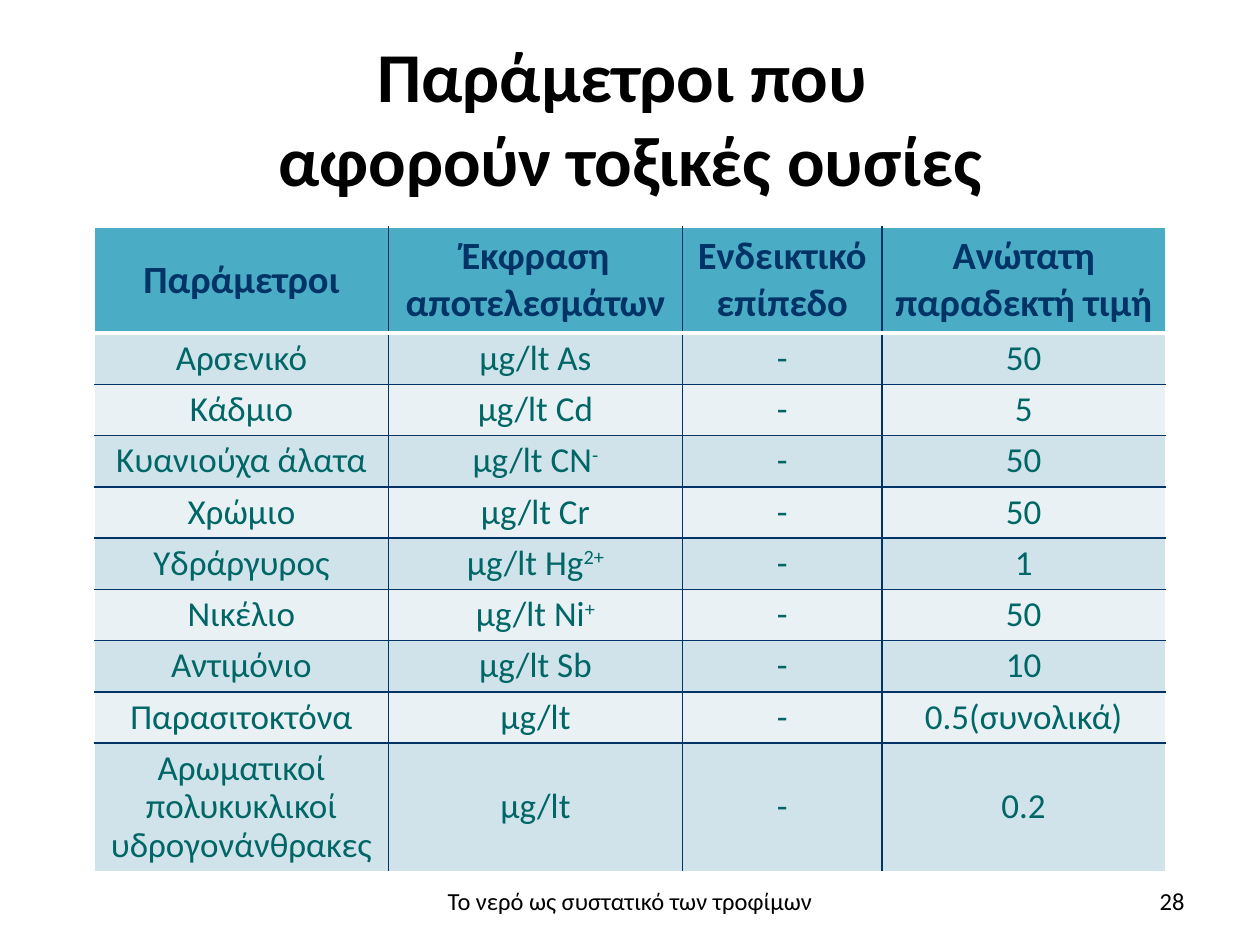
from dataclasses import dataclass

from lxml.etree import SubElement
from pptx import Presentation
from pptx.dml.color import RGBColor
from pptx.enum.text import MSO_ANCHOR, PP_ALIGN
from pptx.oxml.ns import qn
from pptx.util import Inches, Pt

FONT = "Calibri"
COLORS = {
    "black": "000000",
    "white": "FFFFFF",
    "navy": "003366",
    "teal": "006666",
    "header": "4BACC6",
    "odd": "D0E3EA",
    "even": "E9F1F5",
}
UNITS_PER_INCH = 12
COLUMN_SPANS = (28, 28, 19, 27)
HEADER_SPAN, ROW_SPAN, LAST_SPAN = 8.8, 4.2, 10.5


@dataclass(frozen=True)
class Area:
    column: float
    row: float
    columns: float
    rows: float

    def lengths(self) -> list:
        return [units(n) for n in (self.column, self.row, self.columns, self.rows)]


@dataclass(frozen=True)
class Label:
    lines: tuple
    area: Area
    size: int
    align: PP_ALIGN = PP_ALIGN.CENTER
    bold: bool = False


@dataclass(frozen=True)
class Substance:
    name: str
    unit: str
    limit: str
    charge: str = ""


@dataclass(frozen=True)
class CellStyle:
    fill: str
    color: str
    size: int
    bold: bool = False
    spacing: float = 1.0


LABELS = (
    Label(("Παράμετροι που ", "αφορούν τοξικές ουσίες"), Area(6, 3.6, 108, 15), 40, bold=True),
    Label(("Το νερό ως συστατικό των τροφίμων",), Area(41, 83.4, 38, 4.8), 14),
    Label(("28",), Area(86, 83.4, 28, 4.8), 14, PP_ALIGN.RIGHT),
)
HEADINGS = ("Παράμετροι", "Έκφραση αποτελεσμάτων", "Ενδεικτικό επίπεδο", "Ανώτατη παραδεκτή τιμή")
SUBSTANCES = (
    Substance("Αρσενικό", "μg/lt Αs", "50"),
    Substance("Κάδμιο", "μg/lt Cd", "5"),
    Substance("Κυανιούχα άλατα", "μg/lt CN", "50", "-"),
    Substance("Χρώμιο", "μg/lt Cr", "50"),
    Substance("Υδράργυρος", "μg/lt Hg", "1", "2+"),
    Substance("Νικέλιο", "μg/lt Ni", "50", "+"),
    Substance("Αντιμόνιο", "μg/lt Sb", "10"),
    Substance("Παρασιτοκτόνα", "μg/lt", "0.5(συνολικά)"),
    Substance("Αρωματικοί πολυκυκλικοί υδρογονάνθρακες ", "μg/lt", "0.2"),
)


def units(count: float) -> int:
    return Inches(count / UNITS_PER_INCH)


def style_paragraph(para, size: int, color: str, bold: bool, align: PP_ALIGN) -> None:
    para.alignment = align
    para.font.name = FONT
    para.font.size = Pt(size)
    para.font.bold = bold
    para.font.color.rgb = RGBColor.from_string(COLORS[color])


def draw_label(page, label: Label) -> None:
    frame = page.shapes.add_textbox(*label.area.lengths()).text_frame
    frame.word_wrap = True
    frame.vertical_anchor = MSO_ANCHOR.MIDDLE
    para = frame.paragraphs[0]
    for index, line in enumerate(label.lines):
        if index:
            para.add_line_break()
        para.add_run().text = line
    style_paragraph(para, label.size, "black", label.bold, label.align)


def draw_border(cell, side: str, color: str, width: float) -> None:
    line = SubElement(cell._tc.get_or_add_tcPr(), qn(f"a:ln{side}"), w=str(Pt(width)))
    fill = SubElement(line, qn("a:solidFill"))
    SubElement(fill, qn("a:srgbClr"), val=COLORS[color])


def draw_borders(cell, row: int, column: int) -> None:
    last_row, last_column = len(SUBSTANCES), len(HEADINGS) - 1
    draw_border(cell, "L", "white" if column == 0 else "navy", 1)
    draw_border(cell, "R", "white" if column == last_column else "navy", 1)
    draw_border(cell, "T", "white" if row <= 1 else "navy", 3 if row == 1 else 1)
    draw_border(cell, "B", "white" if row in (0, last_row) else "navy", 3 if row == 0 else 1)


def fill_cell(cell, text: str, raised: str, style: CellStyle) -> None:
    cell.fill.solid()
    cell.fill.fore_color.rgb = RGBColor.from_string(COLORS[style.fill])
    cell.vertical_anchor = MSO_ANCHOR.MIDDLE
    para = cell.text_frame.paragraphs[0]
    para.line_spacing = style.spacing
    para.add_run().text = text
    if raised:
        span = para.add_run()
        span.text = raised
        span._r.get_or_add_rPr().set("baseline", "30000")
    style_paragraph(para, style.size, style.color, style.bold, PP_ALIGN.CENTER)


def draw_table(page) -> None:
    heights = (HEADER_SPAN, *[ROW_SPAN] * (len(SUBSTANCES) - 1), LAST_SPAN)
    area = Area(9, 21.6, sum(COLUMN_SPANS), sum(heights))
    table = page.shapes.add_table(len(heights), len(COLUMN_SPANS), *area.lengths()).table
    table.horz_banding = False
    for column, span in zip(table.columns, COLUMN_SPANS):
        column.width = units(span)
    for row, span in zip(table.rows, heights):
        row.height = units(span)

    contents = [[(heading, "") for heading in HEADINGS]]
    for item in SUBSTANCES:
        contents.append([(item.name, ""), (item.unit, item.charge), ("-", ""), (item.limit, "")])
    header = CellStyle("header", "navy", 22, bold=True)
    bands = [CellStyle(fill, "teal", 20, spacing=0.9) for fill in ("even", "odd")]
    for row, entries in enumerate(contents):
        style = bands[row % 2] if row else header
        for column, (text, raised) in enumerate(entries):
            cell = table.cell(row, column)
            draw_borders(cell, row, column)
            fill_cell(cell, text, raised, style)


def main() -> None:
    deck = Presentation()
    deck.slide_width, deck.slide_height = units(120), units(90)
    page = deck.slides.add_slide(deck.slide_layouts[6])
    draw_table(page)
    for label in LABELS:
        draw_label(page, label)
    deck.save("out.pptx")


if __name__ == "__main__":
    main()
